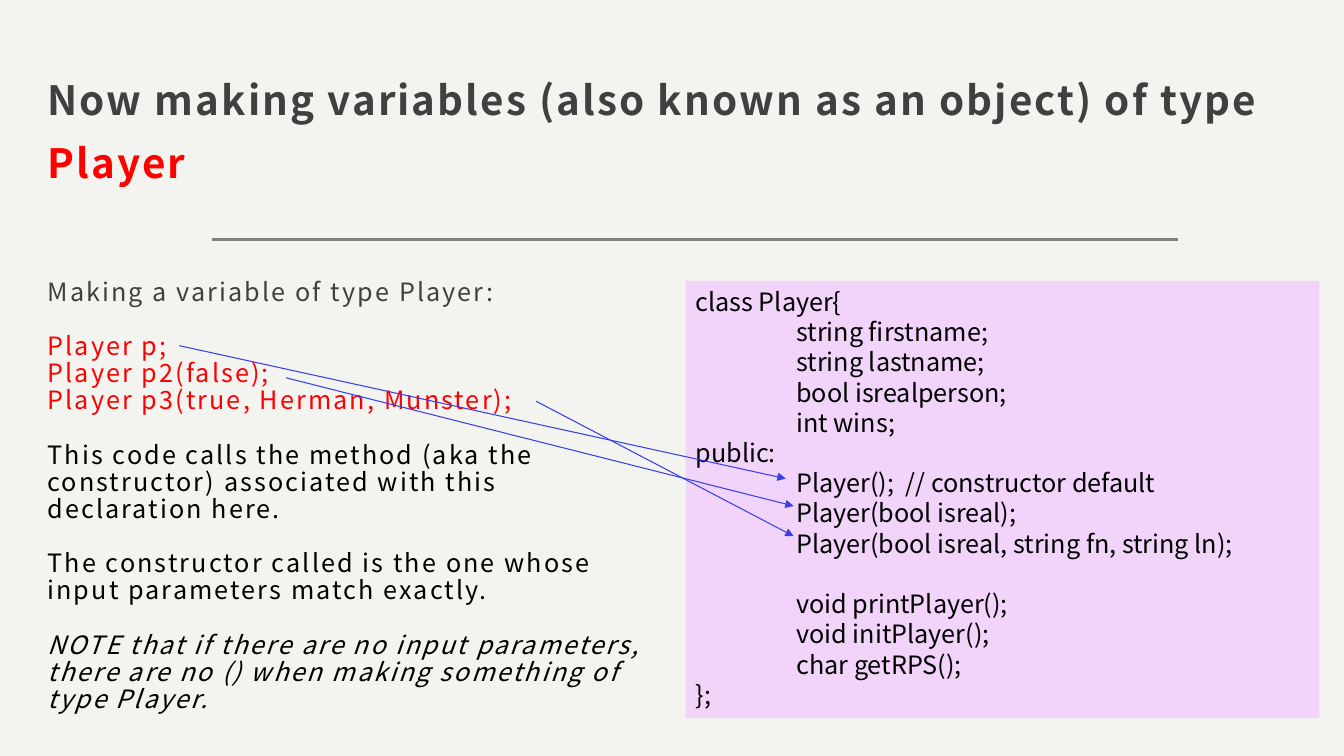
from dataclasses import dataclass

from lxml.etree import SubElement
from pptx import Presentation
from pptx.dml.color import RGBColor
from pptx.enum.shapes import MSO_CONNECTOR, MSO_SHAPE
from pptx.enum.text import MSO_ANCHOR, MSO_AUTO_SIZE, PP_ALIGN
from pptx.oxml.ns import qn
from pptx.util import Cm, Pt

FONT = "Noto Sans CJK JP"
COLORS = {
    "background": "F3F3F0",
    "heading": "404040",
    "accent": "FF0000",
    "text": "000000",
    "rule": "808080",
    "panel": "F2D4FA",
    "arrow": "3540E8",
}
TAB = Cm(2.54)


@dataclass
class Line:
    text: str
    color: str = "text"
    pitch: float = 19.4
    before: float = 0
    italic: bool = False
    indented: bool = False
    tracking: float = 1.5


@dataclass
class Link:
    x1: float
    y1: float
    x2: float
    y2: float
    color: str = "arrow"
    width: float = 0.75
    arrow: bool = True


def rgb(name: str) -> RGBColor:
    return RGBColor.from_string(COLORS[name])


def style_paragraph(p, size: float, pitch: float, tracking: float) -> None:
    p.alignment = PP_ALIGN.LEFT
    p.line_spacing = Pt(pitch)
    p.space_before = Pt(0)
    p.font.name = FONT
    p.font.size = Pt(size)
    if tracking:
        p.font._element.set("spc", str(round(tracking * 100)))


def set_frame(tf, anchor, side: float, top: float, bottom: float) -> None:
    tf.word_wrap = True
    tf.auto_size = MSO_AUTO_SIZE.NONE
    tf.vertical_anchor = anchor
    tf.margin_left = tf.margin_right = Cm(side)
    tf.margin_top, tf.margin_bottom = Cm(top), Cm(bottom)


def write_lines(tf, lines: list[Line]) -> None:
    for i, line in enumerate(lines):
        p = tf.paragraphs[0] if i == 0 else tf.add_paragraph()
        p.text = line.text
        style_paragraph(p, 18, line.pitch, line.tracking)
        p.space_before = Pt(line.before)
        p.font.color.rgb = rgb(line.color)
        p.font.italic = line.italic
        if line.indented:
            pPr = p._p.get_or_add_pPr()
            pPr.set("marL", str(TAB))
            pPr.set("indent", "0")


def draw_link(slide, link: Link) -> None:
    cxn = slide.shapes.add_connector(
        MSO_CONNECTOR.STRAIGHT, Cm(link.x1), Cm(link.y1), Cm(link.x2), Cm(link.y2))
    cxn.line.color.rgb = rgb(link.color)
    cxn.line.width = Pt(link.width)
    if link.arrow:
        SubElement(cxn.line._get_or_add_ln(), qn("a:tailEnd"), type="triangle")
    SubElement(cxn._element.spPr, qn("a:effectLst"))


def code(text: str, indented: bool = True, before: float = 0) -> Line:
    return Line(text, pitch=21.6, before=before, indented=indented, tracking=0)


EXPLANATION = [
    Line("Making a variable of type Player:", "heading", pitch=28),
    Line("Player p;", "accent", before=19.4),
    Line("Player p2(false);", "accent"),
    Line("Player p3(true, Herman, Munster);", "accent"),
    Line("This code calls the method (aka the constructor) associated with "
         "this declaration here.", before=19.4),
    Line("The constructor called is the one whose input parameters match exactly.",
         before=19.4),
    Line("NOTE that if there are no input parameters, there are no () when making "
         "something of type Player.", before=19.4, italic=True),
]
CLASS_CODE = [
    code("class Player{", indented=False),
    code("string firstname;"),
    code("string lastname;"),
    code("bool isrealperson;"),
    code("int wins;"),
    code("public:", indented=False),
    code("Player();  // constructor default"),
    code("Player(bool isreal);"),
    code("Player(bool isreal, string fn, string ln);"),
    code("void printPlayer();", before=21.6),
    code("void initPlayer();"),
    code("char getRPS();"),
    code("};", indented=False),
]
TITLE_RULE = Link(5.34, 6.04, 29.69, 6.04, "rule", 2, arrow=False)
CALLS = [
    Link(4.52, 8.71, 19.8, 12.06),
    Link(7.21, 9.52, 20, 12.75),
    Link(13.51, 10.11, 20, 13.51),
]


def main() -> None:
    prs = Presentation()
    prs.slide_width, prs.slide_height = Cm(33.87), Cm(19.05)
    slide = prs.slides.add_slide(prs.slide_layouts[5])
    slide.background.fill.solid()
    slide.background.fill.fore_color.rgb = rgb("background")

    # Title and the rule below it
    draw_link(slide, TITLE_RULE)
    title = slide.shapes.title
    title.left, title.top, title.width, title.height = (
        Cm(0.9), Cm(1.22), Cm(32.5), Cm(3.73))
    set_frame(title.text_frame, MSO_ANCHOR.BOTTOM, 0.3, 0.3, 0.25)
    p = title.text_frame.paragraphs[0]
    style_paragraph(p, 28.8, 45, 1.5)
    p.font.bold = True
    for text, color in (
            ("Now making variables (also known as an object) of type ", "heading"),
            ("Player", "accent")):
        r = p.add_run()
        r.text = text
        r.font.color.rgb = rgb(color)

    # Explanation on the left
    box = slide.shapes.add_textbox(Cm(0.9), Cm(6.43), Cm(16.05), Cm(12.04))
    set_frame(box.text_frame, MSO_ANCHOR.TOP, 0.3, 0.3, 0.25)
    write_lines(box.text_frame, EXPLANATION)

    # Class declaration on the right
    panel = slide.shapes.add_shape(
        MSO_SHAPE.RECTANGLE, Cm(17.28), Cm(7.08), Cm(15.97), Cm(11.02))
    panel.shadow.inherit = False
    panel.fill.solid()
    panel.fill.fore_color.rgb = rgb("panel")
    panel.line.fill.background()
    set_frame(panel.text_frame, MSO_ANCHOR.TOP, 0.25, 0.13, 0.13)
    write_lines(panel.text_frame, CLASS_CODE)

    # Arrows from each variable to its constructor
    for call in CALLS:
        draw_link(slide, call)

    prs.save("out.pptx")


if __name__ == "__main__":
    main()
